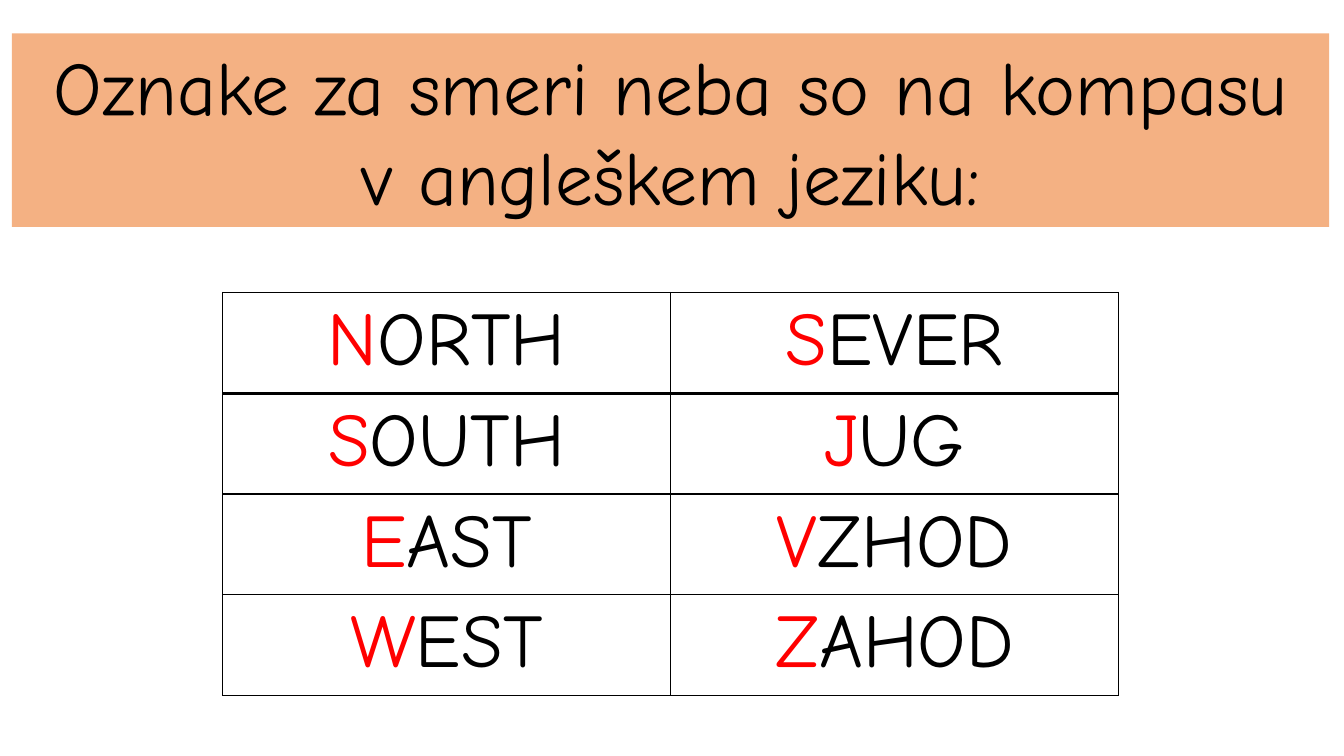
from lxml.etree import SubElement
from pptx import Presentation
from pptx.dml.color import RGBColor
from pptx.enum.shapes import MSO_SHAPE as Shape
from pptx.enum.text import MSO_ANCHOR as Anchor, PP_ALIGN as Align
from pptx.oxml.ns import qn
from pptx.util import Cm, Pt

BLACK, RED, WHITE, PEACH = "000000", "FF0000", "FFFFFF", "F4B183"
LETTERING = {"name": "Comic Neue", "size": Pt(54), "bold": False}
HEADING = ["Oznake za smeri neba so na kompasu", "v angleškem jeziku:"]
DIRECTIONS = [
    ("NORTH", "SEVER"),
    ("SOUTH", "JUG"),
    ("EAST", "VZHOD"),
    ("WEST", "ZAHOD"),
]
COLUMN_WIDTH, ROW_HEIGHT = Cm(11.29), Cm(2.54)


def colour(hex_code):
    return RGBColor.from_string(hex_code)


def paint(part, hex_code):
    part.fill.solid()
    part.fill.fore_color.rgb = colour(hex_code)


def write(paragraph, text, hex_code):
    run = paragraph.add_run()
    run.text = text
    for attribute, value in LETTERING.items():
        setattr(run.font, attribute, value)
    run.font.color.rgb = colour(hex_code)


def add_heading(slide):
    banner = slide.shapes.add_shape(
        Shape.RECTANGLE, Cm(0.3), Cm(0.84), Cm(33.2), Cm(4.88))
    banner.shadow.inherit = False
    paint(banner, PEACH)
    banner.line.fill.background()
    frame = banner.text_frame
    frame.word_wrap = False
    frame.vertical_anchor = Anchor.MIDDLE
    for index, line in enumerate(HEADING):
        paragraph = frame.add_paragraph() if index else frame.paragraphs[0]
        paragraph.alignment = Align.CENTER
        write(paragraph, line, BLACK)


def add_border(cell, side, width):
    properties = cell._tc.get_or_add_tcPr()
    border = SubElement(properties, qn(f"a:{side}"), w=str(Pt(width)))
    fill = SubElement(border, qn("a:solidFill"))
    SubElement(fill, qn("a:srgbClr"), val=BLACK)


def fill_cell(cell, word, heavy_side):
    for side in ("lnL", "lnR", "lnT", "lnB"):
        add_border(cell, side, 2 if side == heavy_side else 1)
    paint(cell, WHITE)
    paragraph = cell.text_frame.paragraphs[0]
    paragraph.alignment = Align.CENTER
    write(paragraph, word[0], RED)
    write(paragraph, word[1:], BLACK)


def add_directions(slide):
    directions = slide.shapes.add_table(
        len(DIRECTIONS), 2, Cm(5.61), Cm(7.37),
        COLUMN_WIDTH * 2, ROW_HEIGHT * len(DIRECTIONS)).table
    directions.first_row = False
    directions.horz_banding = False
    heavy_sides = {0: "lnB", 1: "lnT"}
    for row, words in enumerate(DIRECTIONS):
        for column, word in enumerate(words):
            fill_cell(directions.cell(row, column), word, heavy_sides.get(row))


def main():
    deck = Presentation()
    deck.slide_width, deck.slide_height = Cm(33.87), Cm(19.05)
    slide = deck.slides.add_slide(deck.slide_layouts[6])
    add_heading(slide)
    add_directions(slide)
    deck.save("out.pptx")


if __name__ == "__main__":
    main()
